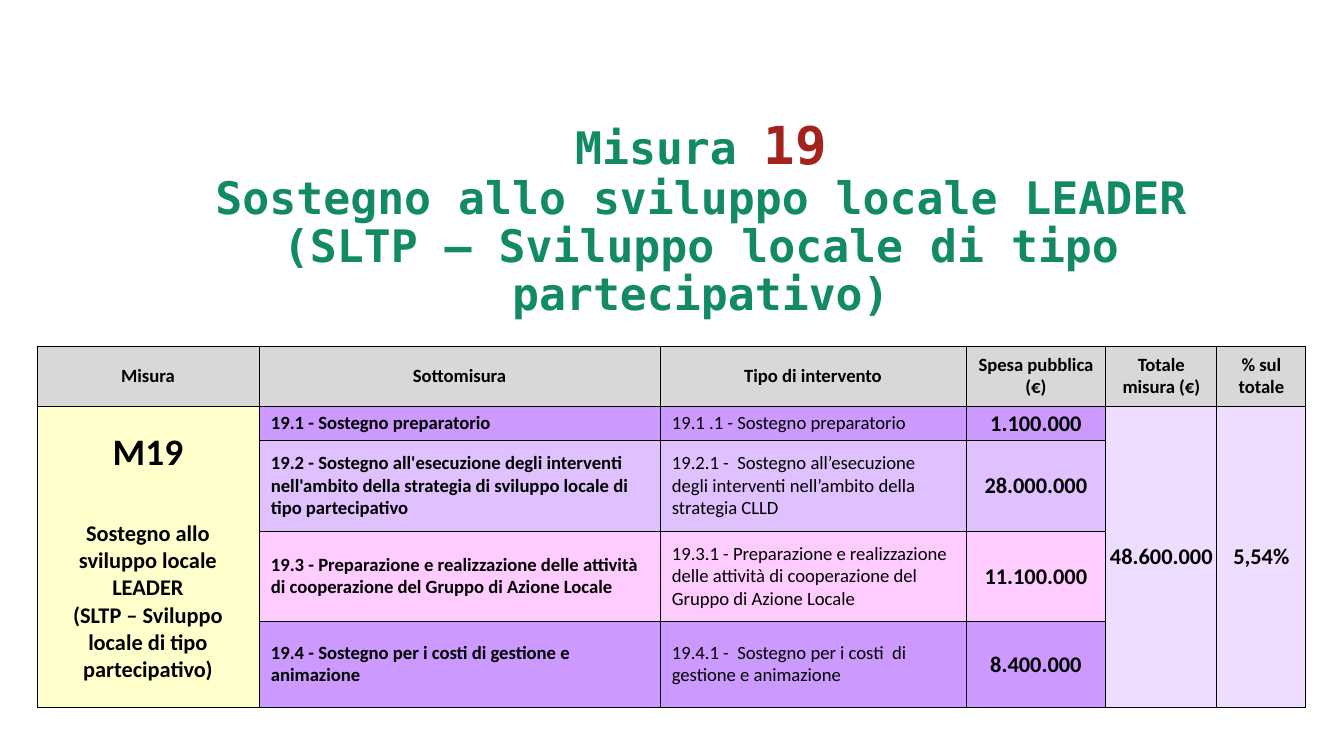
from lxml.etree import SubElement
from pptx import Presentation
from pptx.dml.color import RGBColor
from pptx.enum.text import MSO_ANCHOR as Anchor, MSO_AUTO_SIZE as AutoSize, PP_ALIGN as Align
from pptx.oxml.ns import qn
from pptx.util import Emu, Pt

EMU_PER_PX = 914400 / 134.4
GREEN, RED, BLACK = "128A66", "A3231C", "000000"
GREY, YELLOW, LILAC = "D8D8D8", "FFFFCC", "EEDDFF"
COLUMNS = [222, 401, 306, 140, 111, 89]
ROWS = [60, 33, 91, 90, 86]
HEADERS = [["Misura"], ["Sottomisura"], ["Tipo di intervento"],
           ["Spesa pubblica", "(€)"], ["Totale misura (€)"], ["% sul totale"]]
SUBMEASURES = [
    ("CC99FF", "19.1 - Sostegno preparatorio",
     "19.1 .1 - Sostegno preparatorio", "1.100.000"),
    ("E0C1FF", "19.2 - Sostegno all'esecuzione degli interventi nell'ambito "
     "della strategia di sviluppo locale di tipo partecipativo",
     "19.2.1 -  Sostegno all’esecuzione degli interventi nell’ambito "
     "della strategia CLLD", "28.000.000"),
    ("FFCCFF", "19.3 - Preparazione e realizzazione delle attività di "
     "cooperazione del Gruppo di Azione Locale",
     "19.3.1 - Preparazione e realizzazione delle attività di "
     "cooperazione del Gruppo di Azione Locale", "11.100.000"),
    ("CC99FF", "19.4 - Sostegno per i costi di gestione e animazione",
     "19.4.1 -  Sostegno per i costi  di gestione e animazione", "8.400.000"),
]
LEADER = "Sostegno allo sviluppo locale LEADER"
SLTP = "(SLTP – Sviluppo locale di tipo partecipativo)"


def px(length):
    return Emu(round(length * EMU_PER_PX))


def color(value):
    return RGBColor.from_string(value)


class SlideBuilder:
    """Holds the text style and the current slide, and adds its elements."""

    def __init__(self, slide, title_font, table_font):
        self.slide = slide
        self.title_font = title_font
        self.table_font = table_font

    def style(self, font, name, size, ink, bold=True):
        font.name, font.size, font.bold = name, Pt(size), bold
        font.color.rgb = color(ink)

    def title(self, left, top, width, height, lines):
        box = self.slide.shapes.add_textbox(px(left), px(top), px(width), px(height))
        frame = box.text_frame
        frame.word_wrap = True
        frame.auto_size = AutoSize.SHAPE_TO_FIT_TEXT
        frame.margin_left = frame.margin_right = px(12)
        frame.margin_top = frame.margin_bottom = px(6)
        for index, spans in enumerate(lines):
            para = frame.add_paragraph() if index else frame.paragraphs[0]
            para.alignment = Align.CENTER
            para.line_spacing = 0.9
            for text, size, ink in spans:
                span = para.add_run()
                span.text = text
                self.style(span.font, self.title_font, size, ink)

    def table(self, left, top, columns, rows):
        frame = self.slide.shapes.add_table(
            len(rows), len(columns), px(left), px(top), px(sum(columns)), px(sum(rows)))
        table = frame.table
        table.first_row = table.horz_banding = False
        for column, width in zip(table.columns, columns):
            column.width = px(width)
        for row, height in zip(table.rows, rows):
            row.height = px(height)
        for cell in table.iter_cells():
            self.borders(cell)
        return table

    def borders(self, cell):
        properties = cell._tc.get_or_add_tcPr()
        for side in ("a:lnL", "a:lnR", "a:lnT", "a:lnB"):
            line = SubElement(properties, qn(side), w=str(Pt(0.5)))
            SubElement(SubElement(line, qn("a:solidFill")), qn("a:srgbClr"), val=BLACK)

    def cell(self, cell, fill, lines, size=10, bold=True, align=Align.CENTER, tight=False):
        cell.fill.solid()
        cell.fill.fore_color.rgb = color(fill)
        cell.vertical_anchor = Anchor.MIDDLE
        cell.margin_left = cell.margin_right = px(1 if tight else 12)
        cell.margin_top = px(1 if tight else 6)
        cell.margin_bottom = px(0 if tight else 6)
        cell.text = "\n".join(lines)
        for para in cell.text_frame.paragraphs:
            para.alignment = align
            self.style(para.font, self.table_font, size, BLACK, bold)


def main():
    deck = Presentation()
    deck.slide_width, deck.slide_height = px(1344), px(756)
    page = SlideBuilder(deck.slides.add_slide(deck.slide_layouts[6]),
                        "DejaVu Sans Mono", "Calibri")

    page.title(175, 113, 1052, 167, [
        [("Misura ", 24, GREEN), ("19", 28, RED)],
        [(LEADER, 24, GREEN)],
        [(SLTP, 24, GREEN)],
    ])

    table = page.table(37, 346, COLUMNS, ROWS)
    for column, lines in enumerate(HEADERS):
        page.cell(table.cell(0, column), GREY, lines)
    for row, (fill, submeasure, intervention, spending) in enumerate(SUBMEASURES, 1):
        page.cell(table.cell(row, 1), fill, [submeasure], align=Align.LEFT)
        page.cell(table.cell(row, 2), fill, [intervention], bold=False, align=Align.LEFT)
        page.cell(table.cell(row, 3), fill, [spending], 12, tight=True)

    for column in (0, 4, 5):
        table.cell(1, column).merge(table.cell(len(SUBMEASURES), column))
    measure = table.cell(1, 0)
    page.cell(measure, YELLOW, ["M19", LEADER, SLTP], 12)
    heading, description = measure.text_frame.paragraphs[:2]
    heading.font.size = Pt(20)
    description.space_before = Pt(24)
    page.cell(table.cell(1, 4), LILAC, ["48.600.000"], 12, tight=True)
    page.cell(table.cell(1, 5), LILAC, ["5,54%"], 12, tight=True)

    deck.save("out.pptx")


if __name__ == "__main__":
    main()
